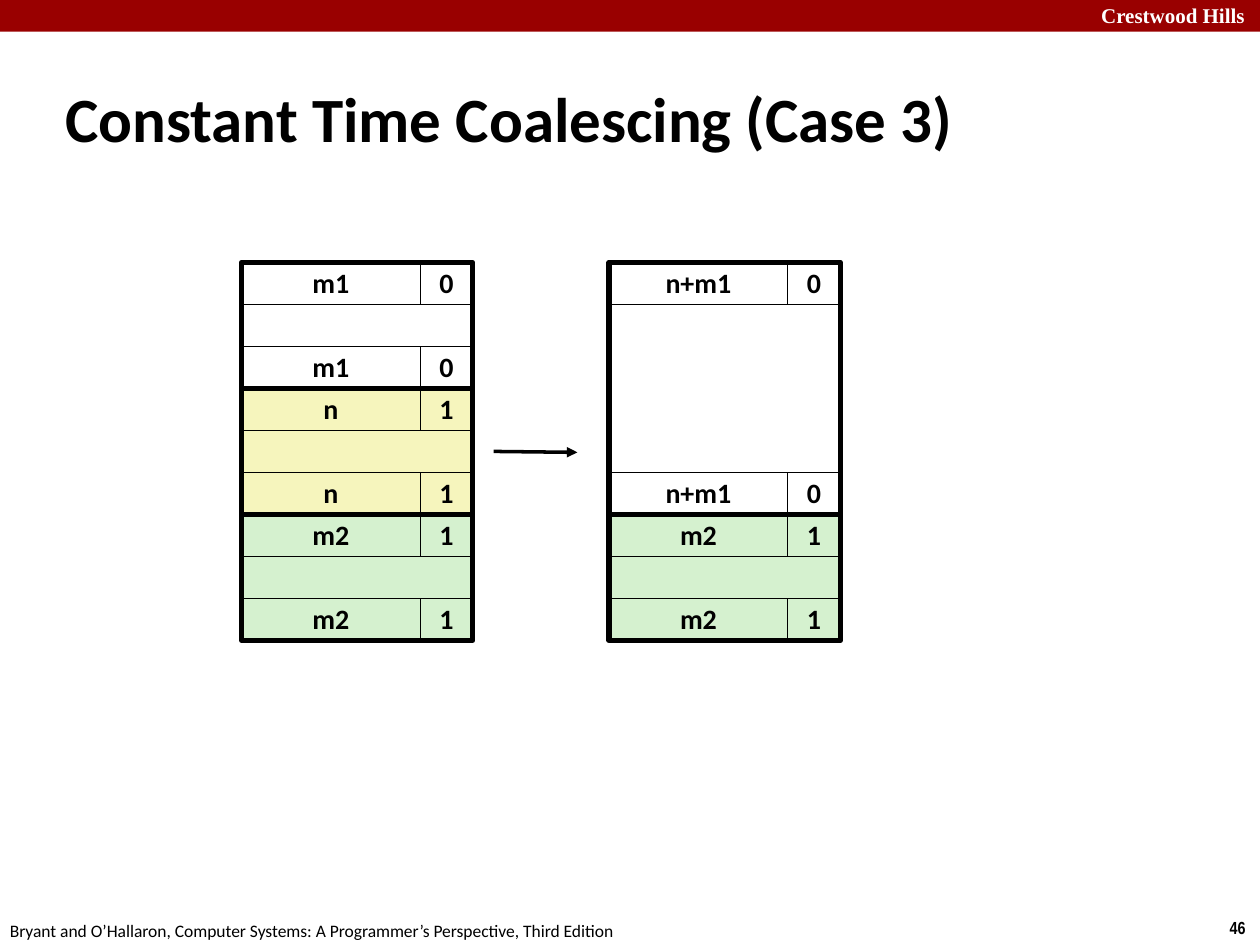
"""Build the slide on constant time coalescing, case 3."""
from dataclasses import dataclass

from lxml import etree
from pptx import Presentation
from pptx.dml.color import RGBColor
from pptx.enum.shapes import MSO_CONNECTOR, MSO_SHAPE
from pptx.enum.text import MSO_ANCHOR, PP_ALIGN
from pptx.oxml.ns import qn
from pptx.util import Cm, Pt

RECT = MSO_SHAPE.RECTANGLE
STRAIGHT = MSO_CONNECTOR.STRAIGHT
LEFT, CENTER = PP_ALIGN.LEFT, PP_ALIGN.CENTER
MIDDLE = MSO_ANCHOR.MIDDLE


@dataclass(frozen=True)
class Theme:
    black: str = "000000"
    white: str = "FFFFFF"
    red: str = "990000"
    yellow: str = "F6F5BD"
    green: str = "D5F1CF"
    sans: str = "Calibri"
    serif: str = "Times New Roman"
    narrow: str = "Arial Narrow"
    title: int = 36
    cell: int = 16
    brand: int = 12
    small: int = 10
    thin: float = 0.25
    thick: float = 3
    arrow: float = 2


T = Theme()

TITLE = "Constant Time Coalescing (Case 3)"
BOOK = "Bryant and O’Hallaron, Computer Systems: A Programmer’s Perspective, Third Edition"
LABELS = [
    ("Crestwood Hills", (21.95, -0.08, 3.63, 0.76), T.serif, T.brand, T.white, True, True),
    ("46", (24.54, 18.36, 0.86, 0.69), T.narrow, T.small, T.black, True, False),
    (BOOK, (-0.05, 18.42, 12.9, 0.69), T.sans, T.small, T.black, False, False),
]
HEAPS = [
    (4.87, [("m1", "0", T.white, 3), ("n", "1", T.yellow, 3), ("m2", "1", T.green, 3)]),
    (12.28, [("n+m1", "0", T.white, 6), ("m2", "1", T.green, 3)]),
]
TOP, WIDTH, TAG = 5.29, 4.66, 3.6
ROW = 7.62 / 9
ARROW = (9.95, 9.1, 11.64, 9.12)


def style(frame, font, size, color, bold, align):
    """Format all text in a frame."""
    for para in frame.paragraphs:
        para.alignment = align
        for run in para.runs:
            run.font.name = font
            run.font.size = Pt(size)
            run.font.bold = bold
            run.font.color.rgb = RGBColor.from_string(color)


def box(slide, area, fill=None, line=None, text=""):
    """Add a rectangle with optional fill, outline and centred text."""
    shape = slide.shapes.add_shape(RECT, *map(Cm, area))
    shape.shadow.inherit = False
    if fill:
        shape.fill.solid()
        shape.fill.fore_color.rgb = RGBColor.from_string(fill)
    else:
        shape.fill.background()
    if line:
        shape.line.color.rgb = RGBColor.from_string(T.black)
        shape.line.width = Pt(line)
    else:
        shape.line.fill.background()
    if text:
        frame = shape.text_frame
        frame.text = text
        frame.word_wrap = False
        frame.vertical_anchor = MIDDLE
        frame.paragraphs[0].line_spacing = 0.98
        style(frame, T.sans, T.cell, T.black, True, CENTER)


def label(slide, text, area, font, size, color, bold, wrap):
    """Add a line of text in the page margin."""
    frame = slide.shapes.add_textbox(*map(Cm, area)).text_frame
    frame.text = text
    frame.word_wrap = wrap
    style(frame, font, size, color, bold, LEFT)


def block(slide, left, top, size, flag, fill, rows):
    """Add a block with header, payload, footer and frame."""
    for y in (top, top + (rows - 1) * ROW):
        box(slide, (left, y, TAG, ROW), fill, T.thin, size)
        box(slide, (left + TAG, y, WIDTH - TAG, ROW), fill, T.thin, flag)
    box(slide, (left, top + ROW, WIDTH, (rows - 2) * ROW), fill, T.thin)
    box(slide, (left, top, WIDTH, rows * ROW), line=T.thick)


def arrow(slide, ends):
    """Add a straight arrow."""
    link = slide.shapes.add_connector(STRAIGHT, *map(Cm, ends))
    link.line.color.rgb = RGBColor.from_string(T.black)
    link.line.width = Pt(T.arrow)
    etree.SubElement(link.line._get_or_add_ln(), qn("a:tailEnd"), type="triangle")
    etree.SubElement(link._element.spPr, qn("a:effectLst"))


def main():
    """Build and save the slide."""
    deck = Presentation()
    deck.slide_width, deck.slide_height = Cm(25.4), Cm(19.05)
    slide = deck.slides.add_slide(deck.slide_layouts[5])
    head = slide.shapes.title
    head.left, head.top, head.width, head.height = map(Cm, (1.06, 1.57, 23.29, 1.6))
    head.text_frame.text = TITLE
    head.text_frame.vertical_anchor = MIDDLE
    style(head.text_frame, T.sans, T.title, T.black, True, LEFT)
    box(slide, (0, 0, 25.4, 0.64), T.red)
    for item in LABELS:
        label(slide, *item)
    for left, blocks in HEAPS:
        top = TOP
        for size, flag, fill, rows in blocks:
            block(slide, left, top, size, flag, fill, rows)
            top += rows * ROW
    arrow(slide, ARROW)
    deck.save("out.pptx")


if __name__ == "__main__":
    main()
